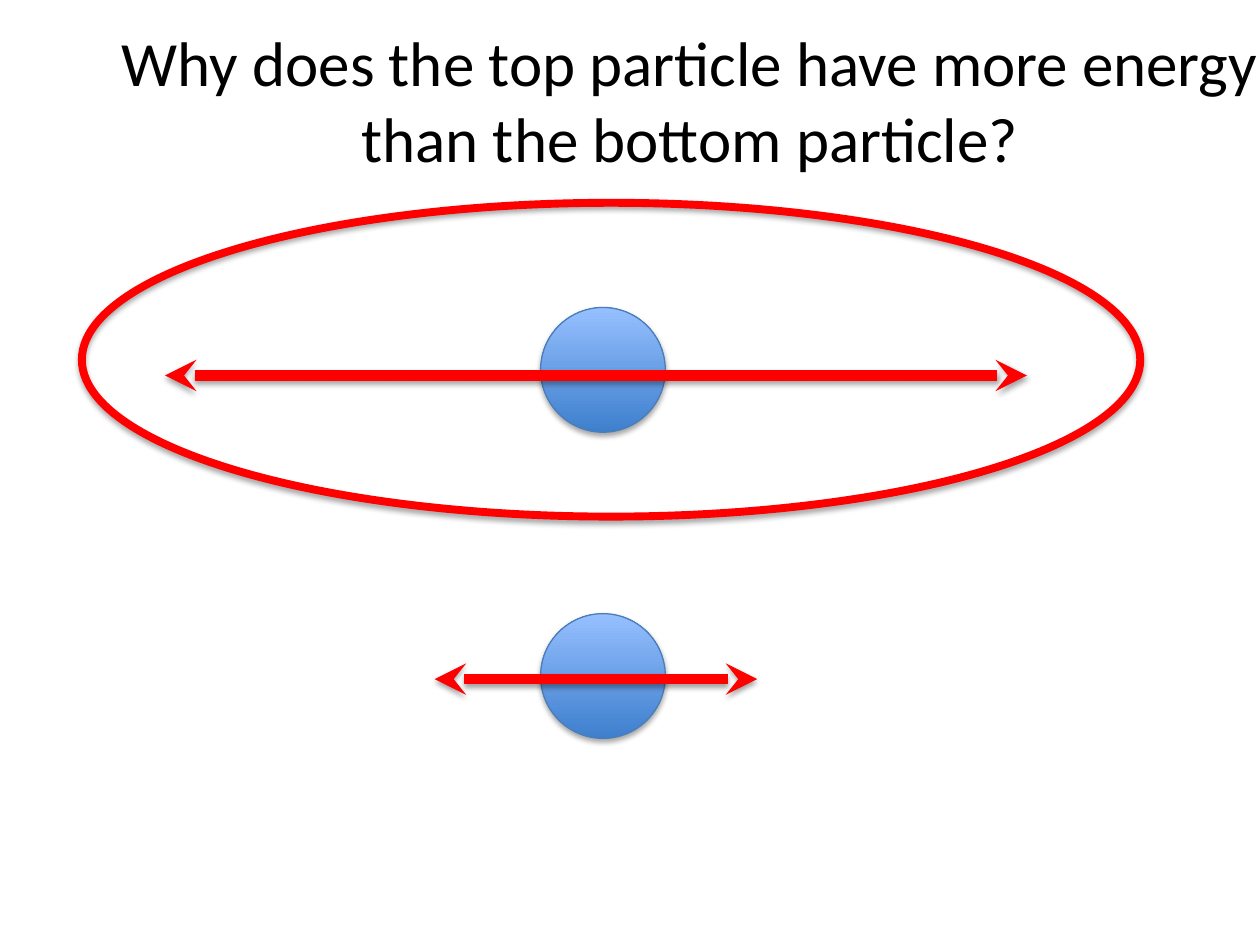
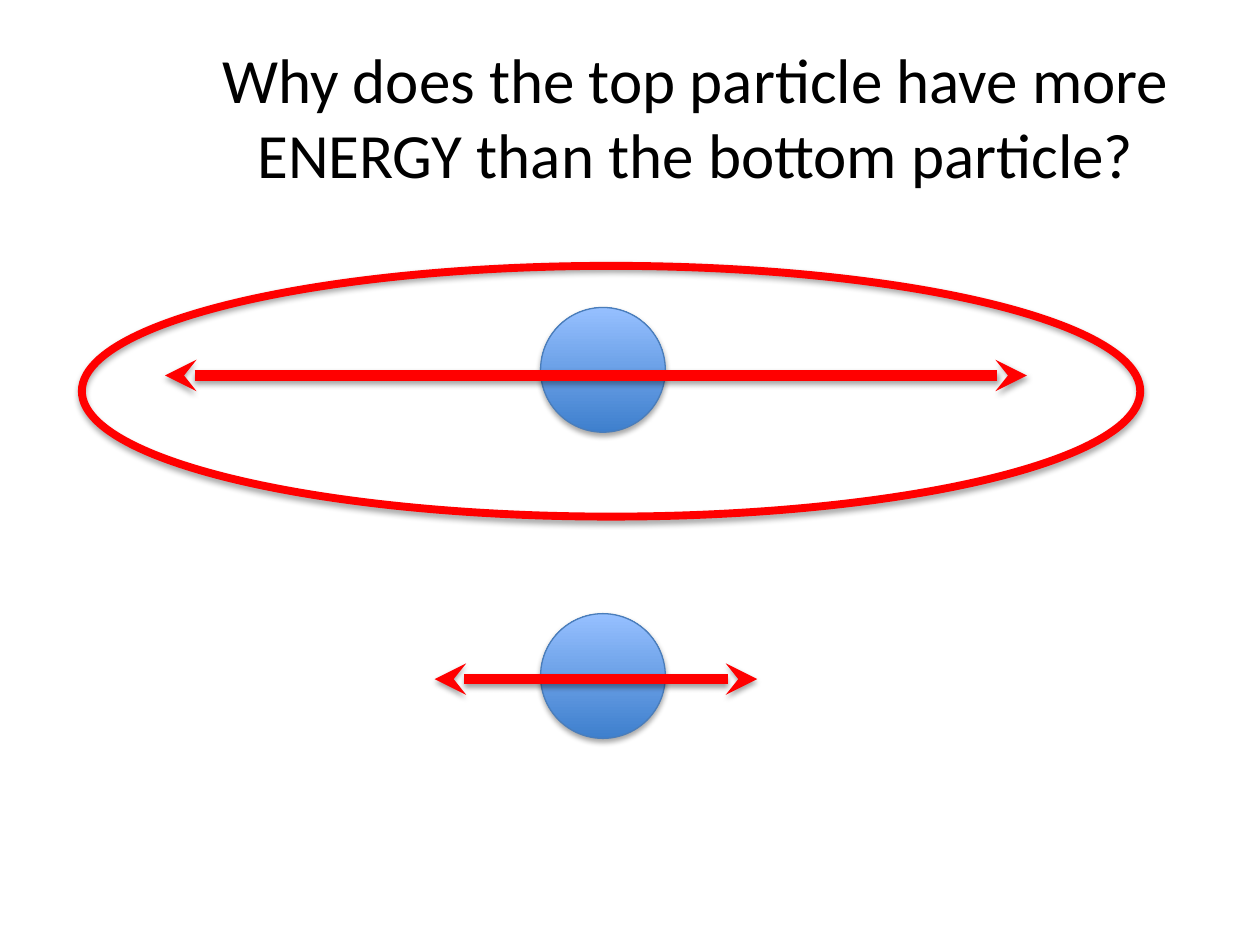
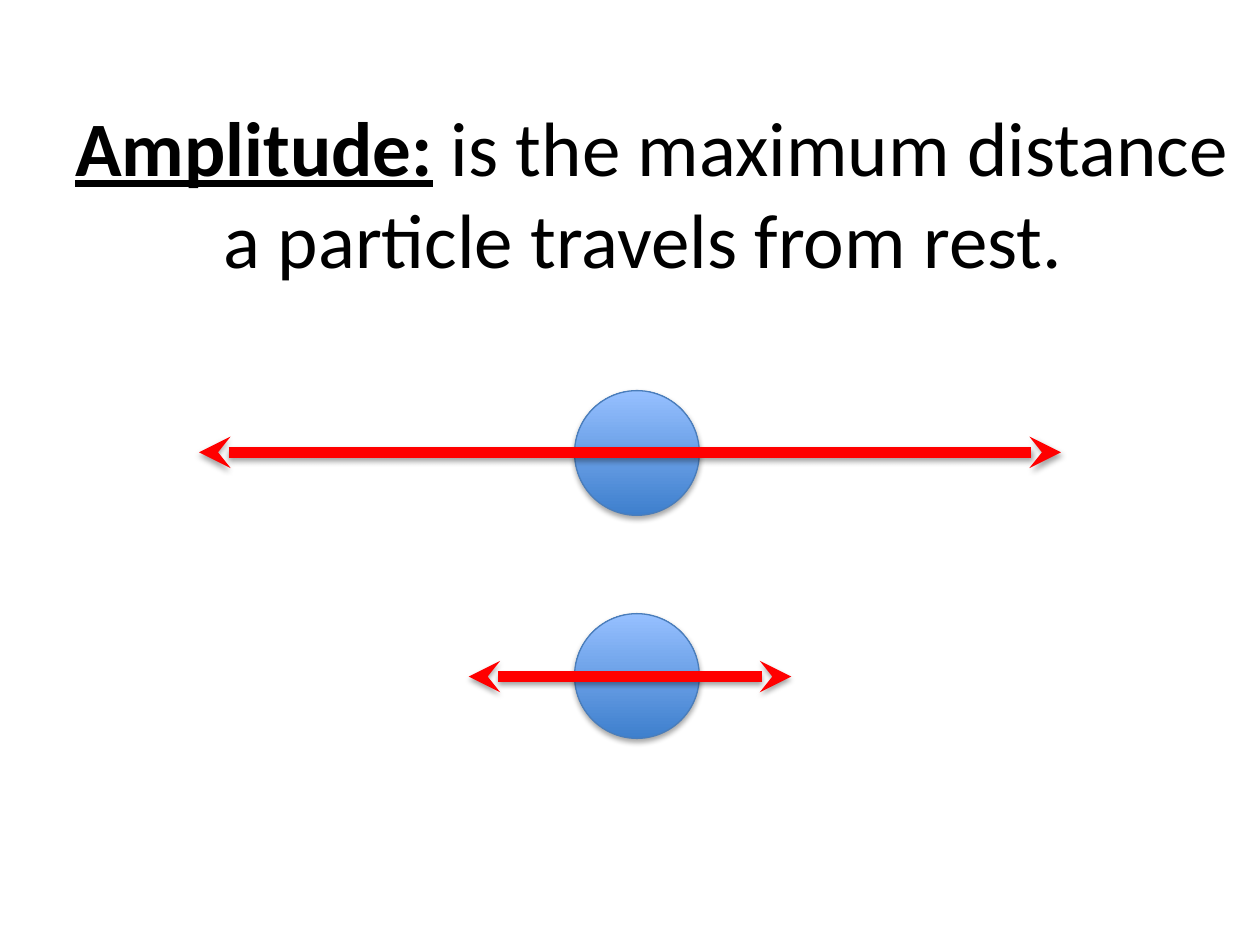
from dataclasses import dataclass

from lxml.etree import SubElement
from pptx import Presentation
from pptx.dml.color import RGBColor
from pptx.enum.shapes import MSO_CONNECTOR, MSO_SHAPE
from pptx.enum.text import MSO_ANCHOR, PP_ALIGN
from pptx.oxml.ns import qn
from pptx.util import Inches, Pt


@dataclass(frozen=True)
class Theme:
    font: str = "Calibri"
    ink: RGBColor = RGBColor(0x00, 0x00, 0x00)
    accent: RGBColor = RGBColor(0xFF, 0x00, 0x00)
    particle_dark: RGBColor = RGBColor(0x3E, 0x7F, 0xCD)
    particle_light: RGBColor = RGBColor(0x96, 0xC0, 0xFF)
    particle_edge: RGBColor = RGBColor(0x4A, 0x7D, 0xBA)
    question_size: int = 36
    definition_size: int = 44
    edge_width: float = 0.75
    ring_width: float = 4.5
    arrow_width: float = 6
    particle_size: float = 0.99
    title_height: float = 1.84


class Deck:
    def __init__(self, theme):
        self.theme = theme
        self.presentation = Presentation()
        self.presentation.slide_width = Inches(10)
        self.presentation.slide_height = Inches(7.5)
        self.slide = None

    def new_slide(self):
        self.slide = self.presentation.slides.add_slide(self.presentation.slide_layouts[6])

    def title(self, left, top, width, size, text, term=""):
        box = self.slide.shapes.add_textbox(
            Inches(left), Inches(top), Inches(width), Inches(self.theme.title_height))
        frame = box.text_frame
        frame.word_wrap = True
        frame.vertical_anchor = MSO_ANCHOR.MIDDLE
        paragraph = frame.paragraphs[0]
        paragraph.alignment = PP_ALIGN.CENTER
        paragraph.font.name = self.theme.font
        paragraph.font.size = Pt(size)
        paragraph.font.color.rgb = self.theme.ink
        if term:
            lead = paragraph.add_run()
            lead.text = term
            lead.font.bold = True
            lead.font.underline = True
        paragraph.add_run().text = text

    def shadow(self, shape, distance, opacity):
        properties = shape.element.spPr
        effects = properties.find(qn("a:effectLst"))
        if effects is None:
            effects = SubElement(properties, qn("a:effectLst"))
        outer = SubElement(effects, qn("a:outerShdw"), blurRad=str(Pt(3.15)),
                           dist=str(Pt(distance)), dir="5400000", rotWithShape="0")
        color = SubElement(outer, qn("a:srgbClr"), val=str(self.theme.ink))
        SubElement(color, qn("a:alpha"), val=str(opacity * 1000))

    def ellipse(self, left, top, width, height, line_color, line_width):
        oval = self.slide.shapes.add_shape(
            MSO_SHAPE.OVAL, Inches(left), Inches(top), Inches(width), Inches(height))
        oval.fill.background()
        oval.line.color.rgb = line_color
        oval.line.width = Pt(line_width)
        oval.shadow.inherit = False
        self.shadow(oval, 1.8, 35)
        return oval

    def particle(self, left, top):
        size = self.theme.particle_size
        ball = self.ellipse(left, top, size, size, self.theme.particle_edge, self.theme.edge_width)
        ball.fill.gradient()
        ball.fill.gradient_angle = 90
        colors = (self.theme.particle_dark, self.theme.particle_light)
        for stop, color in zip(ball.fill.gradient_stops, colors):
            stop.color.rgb = color

    def ring(self, top, height):
        self.ellipse(0.65, top, 8.4, height, self.theme.accent, self.theme.ring_width)

    def motion(self, center, y, length):
        arrow = self.slide.shapes.add_connector(
            MSO_CONNECTOR.STRAIGHT, Inches(center - length / 2), Inches(y),
            Inches(center + length / 2), Inches(y))
        arrow.line.color.rgb = self.theme.accent
        arrow.line.width = Pt(self.theme.arrow_width)
        outline = arrow.element.spPr.find(qn("a:ln"))
        for end in ("a:headEnd", "a:tailEnd"):
            SubElement(outline, qn(end), type="stealth")
        self.shadow(arrow, 1.6, 37)

    def particle_pair(self, left, tops, motion_center, motion_heights):
        for top in tops:
            self.particle(left, top)
        for y, length in zip(motion_heights, (6.84, 2.56)):
            self.motion(motion_center, y, length)


def main():
    theme = Theme()
    deck = Deck(theme)
    questions = (
        (0.65, -0.13, 9.65, "energy", 1.61, 2.49),
        (0.93, 0, 9.18, "ENERGY", 2.11, 1.99),
    )
    for left, top, width, energy, ring_top, ring_height in questions:
        deck.new_slide()
        deck.particle_pair(4.29, (2.44, 4.87), 4.73, (2.98, 5.39))
        deck.ring(ring_top, ring_height)
        deck.title(left, top, width, theme.question_size,
                   f"Why does the top particle have more {energy} than the bottom particle?")

    deck.new_slide()
    deck.title(0.35, 0.6, 9.65, theme.definition_size,
               " is the maximum distance a particle travels from rest. ", term="Amplitude:")
    deck.particle_pair(4.56, (3.1, 4.87), 5, (3.59, 5.37))
    deck.presentation.save("out.pptx")


if __name__ == "__main__":
    main()
